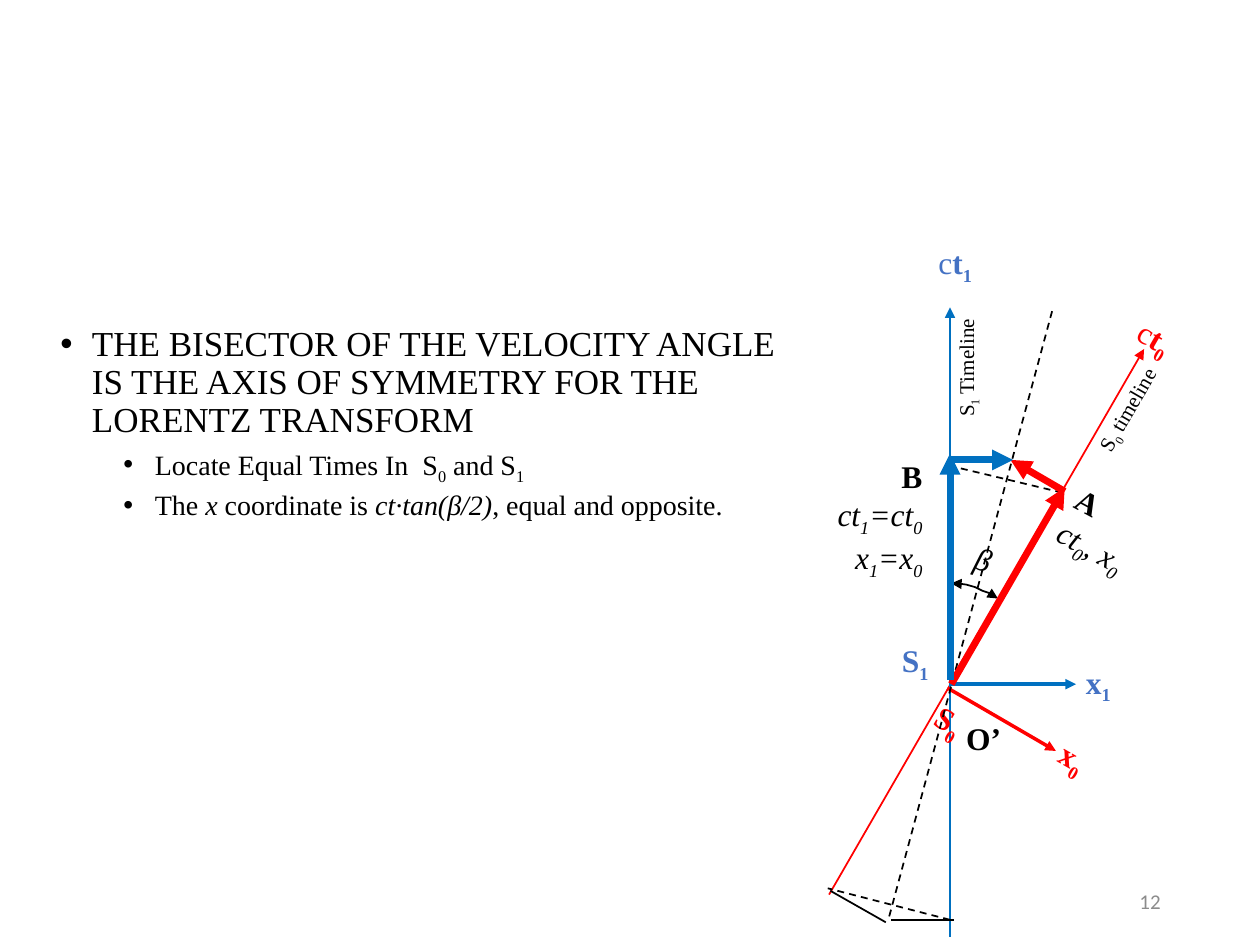
from dataclasses import dataclass

from lxml.etree import SubElement as Sub
from pptx import Presentation
from pptx.dml.color import RGBColor as Rgb
from pptx.enum.dml import MSO_LINE as Dash
from pptx.enum.shapes import MSO_CONNECTOR as Conn
from pptx.enum.text import MSO_ANCHOR as Anchor, MSO_AUTO_SIZE as Fit, PP_ALIGN as Align
from pptx.oxml.ns import qn
from pptx.util import Emu, Pt

SCALE = 9144


def px(n):
    return Emu(n * SCALE)


@dataclass(frozen=True)
class Theme:
    black: str = "000000"
    red: str = "FF0000"
    blue: str = "0070C0"
    label: str = "4472C4"
    gray: str = "8C8C8C"
    serif: str = "Times New Roman"
    sans: str = "Calibri"
    head: int = 20
    item: int = 16
    mark: int = 18
    note: int = 12
    thin: int = 1
    mid: int = 2
    bold: int = 4


class Board:
    def __init__(self, deck, theme):
        self.theme = theme
        self.slide = deck.slides.add_slide(deck.slide_layouts[1])
        self.shapes = self.slide.shapes
        title = self.shapes.title.element
        title.getparent().remove(title)

    def fill(self, para, text, size, color, font=None):
        for piece in text.split("|"):
            run = para.add_run()
            run.text = piece.lstrip("*~_")
            flags = piece[:len(piece) - len(run.text)]
            run.font.name = font or self.theme.serif
            run.font.size = Pt(size)
            run.font.color.rgb = Rgb.from_string(color)
            run.font.bold = "*" in flags
            run.font.italic = "~" in flags
            if "_" in flags:
                run._r.get_or_add_rPr().set("baseline", "-25000")

    def body(self, at, items):
        hold = self.slide.placeholders[1]
        hold.left, hold.top, hold.width, hold.height = map(px, at)
        frame = hold.text_frame
        frame.auto_size = Fit.NONE
        frame.vertical_anchor = Anchor.TOP
        for i, (level, text) in enumerate(items):
            para = frame.add_paragraph() if i else frame.paragraphs[0]
            para.level = level
            para.line_spacing = 0.9
            para.space_before = Pt(5 if level else 10)
            prop = para._p.get_or_add_pPr()
            prop.set("marL", str(px(25 + 50 * level)))
            prop.set("indent", str(px(-25)))
            Sub(prop, qn("a:buFont")).set("typeface", "Arial")
            Sub(prop, qn("a:buChar")).set("char", "•")
            size = self.theme.item if level else self.theme.head
            self.fill(para, text, size, self.theme.black)

    def text(self, at, lines, color, size=None, turn=0, align=Align.LEFT,
             wrap=True, font=None):
        box = self.shapes.add_textbox(*map(px, at))
        box.rotation = turn
        frame = box.text_frame
        frame.word_wrap = wrap
        frame.auto_size = Fit.SHAPE_TO_FIT_TEXT
        for i, line in enumerate(lines):
            para = frame.add_paragraph() if i else frame.paragraphs[0]
            para.alignment = align
            self.fill(para, line, size or self.theme.mark, color, font)

    def stroke(self, shape, color, width, ends="", dash=False):
        line = shape.line
        line.color.rgb = Rgb.from_string(color)
        line.width = Pt(width)
        if dash:
            line.dash_style = Dash.DASH
        ln = line._get_or_add_ln()
        for end in ends.split():
            Sub(ln, qn(f"a:{end}End")).set("type", "triangle")

    def line(self, start, stop, color, width, ends="", dash=False):
        link = self.shapes.add_connector(Conn.STRAIGHT, *map(px, start + stop))
        self.stroke(link, color, width, ends, dash)
        Sub(link._element.spPr, qn("a:effectLst"))

    def curve(self, points, color, width, ends):
        build = self.shapes.build_freeform(*points[0], scale=SCALE)
        build.add_line_segments(points[1:], close=False)
        arc = build.convert_to_shape()
        arc.fill.background()
        arc.shadow.inherit = False
        self.stroke(arc, color, width, ends)


def main():
    deck = Presentation()
    deck.slide_width, deck.slide_height = px(1000), px(750)
    t = Theme()
    board = Board(deck, t)

    board.body((38, 254, 618, 187), [
        (0, "THE BISECTOR OF THE VELOCITY ANGLE IS THE AXIS OF SYMMETRY "
            "FOR THE LORENTZ TRANSFORM"),
        (1, "Locate Equal Times In  S|_0| and S|_1"),
        (1, "The |~x| coordinate is |~ct·tan(β/2)|, equal and opposite."),
    ])

    for start, stop, color, width, ends in [
        ((908, 277), (658, 710), t.red, t.thin, "head"),
        ((754, 244), (754, 744), t.blue, t.thin, "head"),
        ((754, 543), (854, 543), t.blue, t.mid, "tail"),
        ((752, 546), (838, 596), t.red, t.mid, "tail"),
    ]:
        board.line(start, stop, color, width, ends)

    for at, text, color, turn in [
        ((852, 521, 73, 40), "*x|*_1", t.label, 0),
        ((735, 188, 73, 40), "c|*t|*_1", t.label, 0),
        ((706, 504, 73, 40), "*S|*_1", t.label, 0),
        ((830, 589, 73, 40), "*x|*_0", t.red, 30),
        ((892, 254, 73, 40), "c|*t|*_0", t.red, 30),
        ((731, 560, 73, 40), "*S|*_0", t.red, 30),
        ((757, 566, 54, 40), "*O’", t.black, 0),
        ((764, 428, 63, 40), "~β", t.black, 16.8),
    ]:
        board.text(at, [text], color, turn=turn)

    board.text((705, 264, 123, 30), ["S|_1| Timeline"], t.black, t.note, 270)
    board.text((834, 310, 121, 30), ["S|_0| timeline"], t.black, t.note, 300,
               Align.CENTER)
    board.text((835, 386, 79, 71), ["*A", "~ct|~_0|~, x|~_0"], t.black,
               turn=28.3, wrap=False)
    board.text((652, 358, 90, 101), ["*B", "~ct|~_1|~=ct|~_0", "~x|~_1|~=x|~_0"],
               t.black, align=Align.RIGHT, wrap=False)
    board.text((706, 700, 225, 30), ["12"], t.gray, t.note, align=Align.RIGHT,
               font=t.sans)

    board.curve([(755, 463), (760, 463), (767, 464), (774, 466), (780, 469),
                 (786, 471), (792, 475)], t.black, t.thin, "head tail")

    for start, stop, dash in [
        ((835, 247), (705, 730), True),
        ((843, 391), (751, 369), True),
        ((754, 730), (657, 705), True),
        ((659, 707), (703, 732), False),
        ((757, 730), (707, 730), False),
    ]:
        board.line(start, stop, t.black, t.thin, dash=dash)

    for tip, tail, color in [
        ((802, 365), (845, 390), t.red),
        ((845, 387), (755, 543), t.red),
        ((754, 360), (754, 540), t.blue),
        ((804, 365), (754, 365), t.blue),
    ]:
        board.line(tip, tail, color, t.bold, "head")

    deck.save("out.pptx")


if __name__ == "__main__":
    main()
